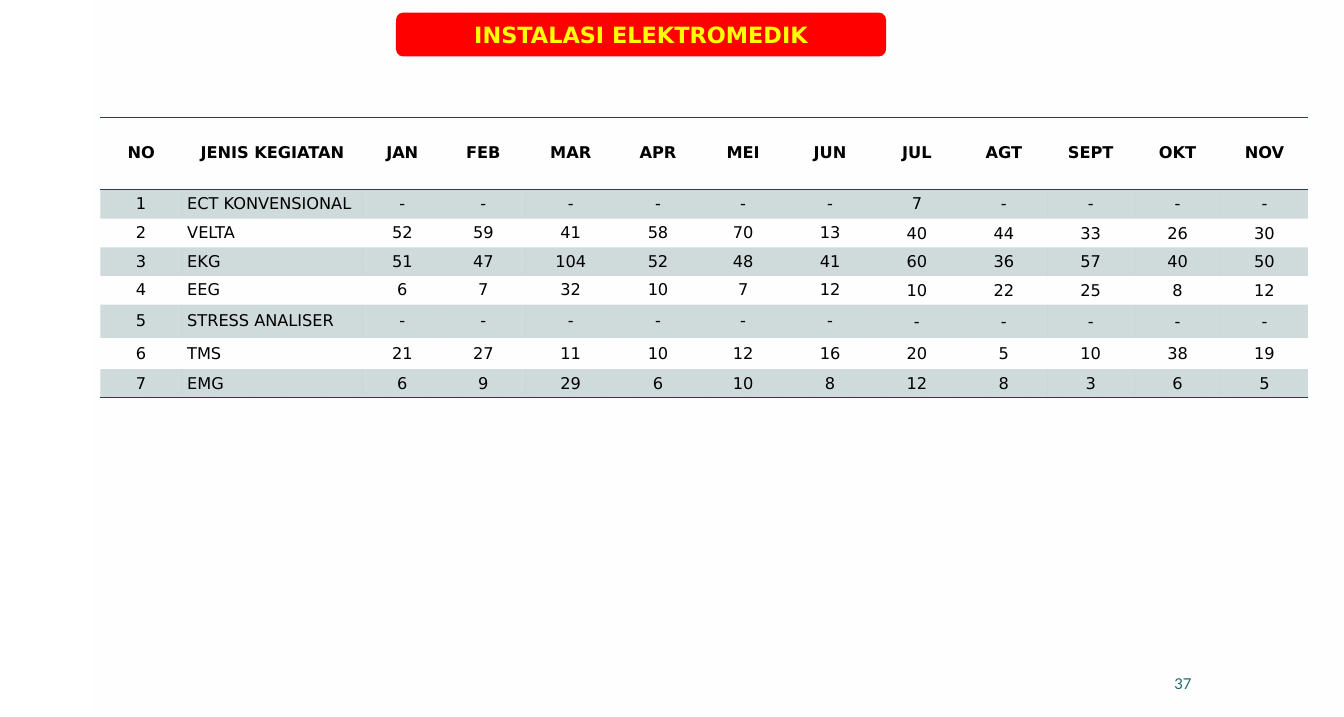
from dataclasses import dataclass

from lxml.etree import SubElement
from pptx import Presentation
from pptx.dml.color import RGBColor
from pptx.enum.shapes import MSO_SHAPE
from pptx.enum.text import MSO_ANCHOR, PP_ALIGN
from pptx.oxml.ns import qn
from pptx.util import Inches, Pt


@dataclass(frozen=True)
class Theme:
    heading_font: str = "DejaVu Sans"
    number_font: str = "Lato"
    title_size: int = 18
    table_size: int = 13
    number_size: int = 12
    white: str = "FFFFFF"
    black: str = "000000"
    red: str = "FF0000"
    yellow: str = "FFFF00"
    teal: str = "164B4F"
    number_color: str = "1F696F"
    band_opacity: int = 20
    panel_opacities: tuple = (60, 0)
    no_style: str = "{2D5ABB26-0587-4C30-8999-92F81FD0307C}"


MONTHS = ["JAN", "FEB", "MAR", "APR", "MEI", "JUN", "JUL", "AGT", "SEPT", "OKT", "NOV"]
ACTIVITIES = [
    ("ECT KONVENSIONAL", ["-"] * 6 + [7] + ["-"] * 4),
    ("VELTA", [52, 59, 41, 58, 70, 13, 40, 44, 33, 26, 30]),
    ("EKG", [51, 47, 104, 52, 48, 41, 60, 36, 57, 40, 50]),
    ("EEG", [6, 7, 32, 10, 7, 12, 10, 22, 25, 8, 12]),
    ("STRESS ANALISER", ["-"] * 11),
    ("TMS", [21, 27, 11, 10, 12, 16, 20, 5, 10, 38, 19]),
    ("EMG", [6, 9, 29, 6, 10, 8, 12, 8, 3, 6, 5]),
]
COLUMN_WIDTHS = [0.91, 2.02, 0.88, 0.93, 1.02, 0.93] + [0.97] * 7
ROW_HEIGHTS = [0.8, 0.33, 0.32, 0.32, 0.32, 0.37, 0.35, 0.32]
NAME_COLUMN = 1
JULY_COLUMN = 8
WIDE_MARGINS = (0.06, 0.05, 0.06, 0.05)
NARROW_MARGINS = (0.01, 0.01, 0.01, 0)
NUMBER_MARGINS = (0.11, 0.06, 0.11, 0.06)


class SlideBuilder:
    def __init__(self, slide, theme):
        self.slide = slide
        self.theme = theme

    def format_text(self, text_frame, size, color, font_name, bold=False, align=PP_ALIGN.CENTER):
        for paragraph in text_frame.paragraphs:
            paragraph.alignment = align
            for run in paragraph.runs:
                run.font.name = font_name
                run.font.size = Pt(size)
                run.font.bold = bold
                run.font.color.rgb = RGBColor.from_string(color)

    def set_margins(self, target, margins):
        left, top, right, bottom = map(Inches, margins)
        target.margin_left, target.margin_top = left, top
        target.margin_right, target.margin_bottom = right, bottom

    def set_opacities(self, element, opacities):
        for color, opacity in zip(element.iter(qn("a:srgbClr")), opacities):
            SubElement(color, qn("a:alpha"), val=str(opacity * 1000))

    def add_box(self, preset, left, top, width, height):
        shape = self.slide.shapes.add_shape(
            preset, Inches(left), Inches(top), Inches(width), Inches(height))
        shape.shadow.inherit = False
        shape.line.fill.background()
        return shape

    def add_panel(self, left, top, width, height):
        panel = self.add_box(MSO_SHAPE.RECTANGLE, left, top, width, height)
        panel.fill.gradient()
        panel.fill.gradient_angle = 270
        for stop in panel.fill.gradient_stops:
            stop.color.rgb = RGBColor.from_string(self.theme.white)
        self.set_opacities(panel.element.spPr, self.theme.panel_opacities)

    def add_banner(self, text, left, top, width, height):
        banner = self.add_box(MSO_SHAPE.ROUNDED_RECTANGLE, left, top, width, height)
        banner.fill.solid()
        banner.fill.fore_color.rgb = RGBColor.from_string(self.theme.red)
        banner.text_frame.text = text
        banner.text_frame.vertical_anchor = MSO_ANCHOR.MIDDLE
        self.format_text(banner.text_frame, self.theme.title_size, self.theme.yellow,
                         self.theme.heading_font, bold=True)

    def add_slide_number(self, text, left, top, width, height):
        box = self.slide.shapes.add_textbox(
            Inches(left), Inches(top), Inches(width), Inches(height))
        text_frame = box.text_frame
        text_frame.word_wrap = True
        text_frame.vertical_anchor = MSO_ANCHOR.MIDDLE
        self.set_margins(text_frame, NUMBER_MARGINS)
        text_frame.text = text
        self.format_text(text_frame, self.theme.number_size, self.theme.number_color,
                         self.theme.number_font, align=PP_ALIGN.RIGHT)

    def add_border(self, properties, side):
        line = SubElement(properties, qn(f"a:{side}"), w=str(Pt(1)))
        fill = SubElement(line, qn("a:solidFill"))
        SubElement(fill, qn("a:srgbClr"), val=self.theme.teal)

    def format_cell(self, cell, row, column, last_row):
        header = row == 0
        narrow = not header and column >= JULY_COLUMN
        left_aligned = not header and column == NAME_COLUMN
        self.set_margins(cell, NARROW_MARGINS if narrow else WIDE_MARGINS)
        cell.vertical_anchor = MSO_ANCHOR.MIDDLE
        self.format_text(cell.text_frame, self.theme.table_size, self.theme.black,
                         self.theme.heading_font, bold=header,
                         align=PP_ALIGN.LEFT if left_aligned else PP_ALIGN.CENTER)
        properties = cell.fill._xPr
        if header:
            self.add_border(properties, "lnT")
        if header or row == last_row:
            self.add_border(properties, "lnB")
        if row % 2:
            cell.fill.solid()
            cell.fill.fore_color.rgb = RGBColor.from_string(self.theme.teal)
            self.set_opacities(properties.find(qn("a:solidFill")), [self.theme.band_opacity])
        else:
            cell.fill.background()

    def add_table(self, rows, left, top):
        frame = self.slide.shapes.add_table(
            len(rows), len(COLUMN_WIDTHS), Inches(left), Inches(top),
            Inches(sum(COLUMN_WIDTHS)), Inches(sum(ROW_HEIGHTS)))
        table = frame.table
        table.first_row = table.horz_banding = False
        for style in frame.element.iter(qn("a:tableStyleId")):
            style.text = self.theme.no_style
        for column, width in zip(table.columns, COLUMN_WIDTHS):
            column.width = Inches(width)
        for row, height in zip(table.rows, ROW_HEIGHTS):
            row.height = Inches(height)
        for row_index, values in enumerate(rows):
            for column_index, value in enumerate(values):
                cell = table.cell(row_index, column_index)
                cell.text_frame.text = str(value)
                self.format_cell(cell, row_index, column_index, len(rows) - 1)


def main():
    presentation = Presentation()
    presentation.slide_width = Inches(15)
    presentation.slide_height = Inches(8)
    slide = presentation.slides.add_slide(presentation.slide_layouts[6])
    builder = SlideBuilder(slide, Theme())
    rows = [["NO", "JENIS KEGIATAN", *MONTHS]]
    rows += [[number, name, *counts] for number, (name, counts) in enumerate(ACTIVITIES, 1)]
    builder.add_panel(1.03, 0, 13.97, 8)
    builder.add_table(rows, 1.12, 1.31)
    builder.add_slide_number("37", 9.91, 7.41, 3.5, 0.43)
    builder.add_banner("INSTALASI ELEKTROMEDIK", 4.42, 0.14, 5.47, 0.49)
    presentation.save("out.pptx")


if __name__ == "__main__":
    main()
